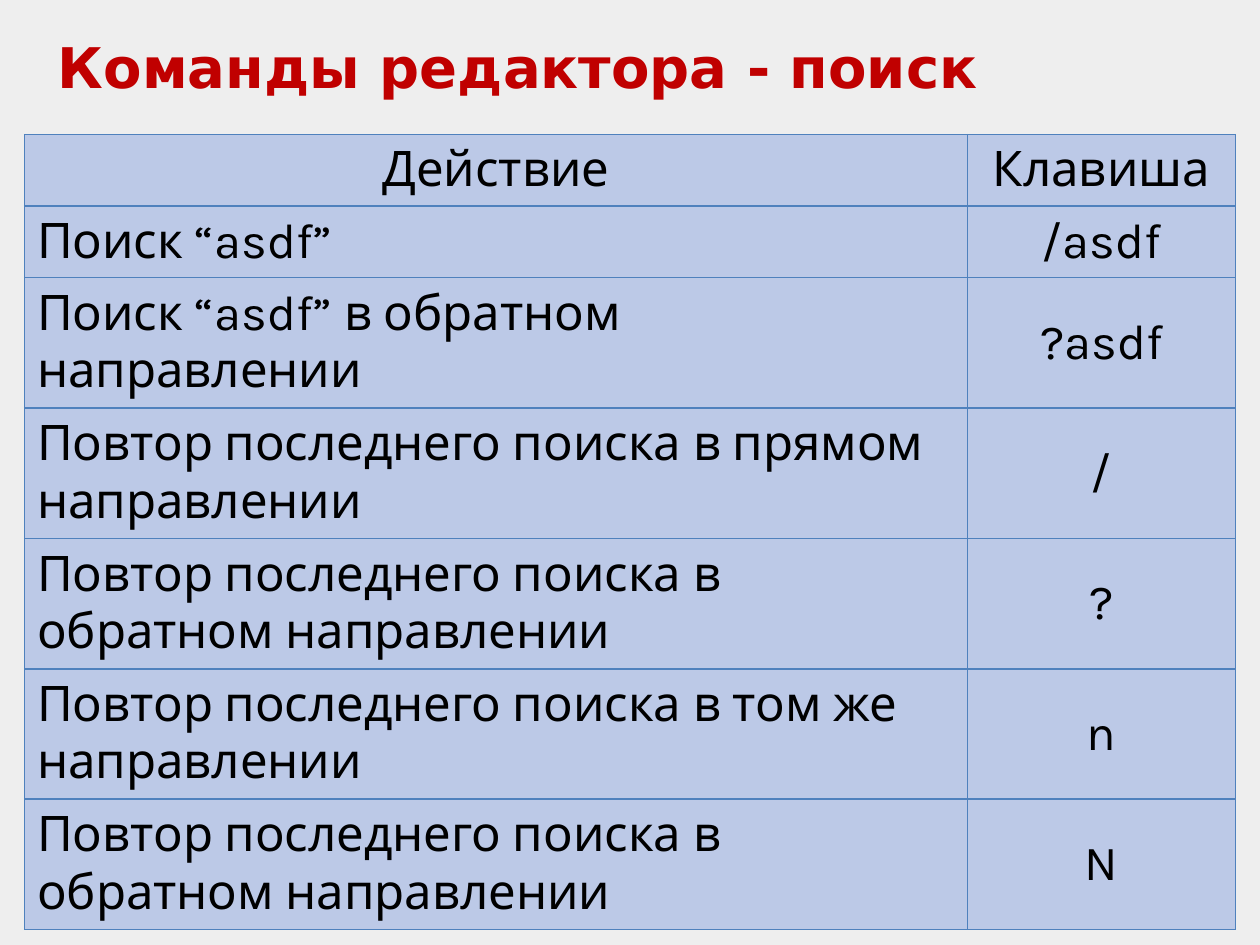
from lxml.etree import SubElement
from pptx import Presentation
from pptx.dml.color import RGBColor
from pptx.enum.text import MSO_ANCHOR, PP_ALIGN
from pptx.oxml.ns import qn
from pptx.util import Pt

COMMANDS = [
    ("Действие", "Клавиша"),
    ("Поиск “asdf”", "/asdf"),
    ("Поиск “asdf” в обратном направлении", "?asdf"),
    ("Повтор последнего поиска в прямом направлении", "/"),
    ("Повтор последнего поиска в обратном направлении", "?"),
    ("Повтор последнего поиска в том же направлении", "n"),
    ("Повтор последнего поиска в обратном направлении", "N"),
]
COLUMN_WIDTHS = (538.8, 153.2)
ROW_HEIGHTS = [40.8] * 2 + [74.5] * 5


def rgb(value):
    return RGBColor.from_string(value)


class SlideBuilder:
    title_font, body_font = "DejaVu Sans", "Karla"
    title_color, text_color = "C00000", "000000"
    background, cell_fill, border = "EEEEEE", "BCC9E7", "4F81BD"

    def __init__(self, prs):
        self.s = prs.slides.add_slide(prs.slide_layouts[6])
        fill = self.s.background.fill
        fill.solid()
        fill.fore_color.rgb = rgb(self.background)

    def run(self, p, text, font, size, color, bold=False):
        r = p.add_run()
        r.text = text
        r.font.name = font
        r.font.size = Pt(size)
        r.font.bold = bold
        r.font.color.rgb = rgb(color)

    def title(self, text, x, y, w, h):
        tf = self.s.shapes.add_textbox(Pt(x), Pt(y), Pt(w), Pt(h)).text_frame
        tf.word_wrap = True
        self.run(tf.paragraphs[0], text, self.title_font, 32, self.title_color, True)

    def cell_borders(self, cell):
        tc_pr = cell._tc.get_or_add_tcPr()
        for side in ("a:lnL", "a:lnR", "a:lnT", "a:lnB"):
            ln = SubElement(tc_pr, qn(side), w=str(Pt(1)))
            solid = SubElement(ln, qn("a:solidFill"))
            SubElement(solid, qn("a:srgbClr"), val=self.border)

    def cell(self, cell, text, centered):
        self.cell_borders(cell)
        cell.fill.solid()
        cell.fill.fore_color.rgb = rgb(self.cell_fill)
        cell.vertical_anchor = MSO_ANCHOR.MIDDLE
        p = cell.text_frame.paragraphs[0]
        p.alignment = PP_ALIGN.CENTER if centered else PP_ALIGN.LEFT
        self.run(p, text, self.body_font, 28, self.text_color)

    def table(self, rows, x, y, widths, heights):
        table = self.s.shapes.add_table(
            len(rows), len(widths), Pt(x), Pt(y), Pt(sum(widths)), Pt(sum(heights))
        ).table
        for column, width in zip(table.columns, widths):
            column.width = Pt(width)
        for i, (row, height) in enumerate(zip(rows, heights)):
            table.rows[i].height = Pt(height)
            for j, text in enumerate(row):
                self.cell(table.cell(i, j), text, centered=i == 0 or j == 1)


def main():
    prs = Presentation()
    prs.slide_width, prs.slide_height = Pt(720), Pt(540)
    slide = SlideBuilder(prs)
    slide.title("Команды редактора - поиск", 26, 15, 668, 46)
    slide.table(COMMANDS, 14, 77, COLUMN_WIDTHS, ROW_HEIGHTS)
    prs.save("out.pptx")


if __name__ == "__main__":
    main()
